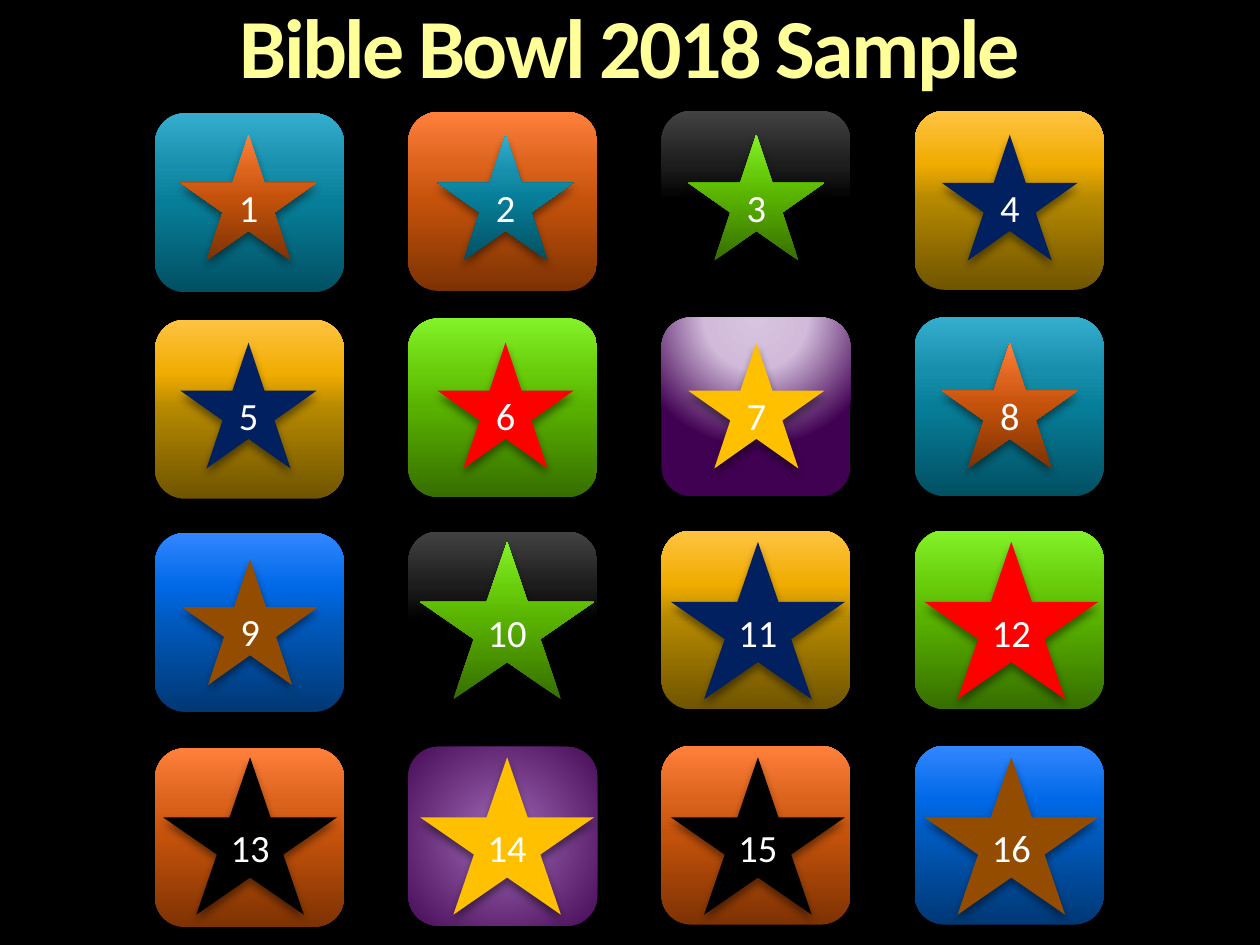
from lxml import etree
from pptx import Presentation
from pptx.dml.color import RGBColor
from pptx.enum import shapes, text
from pptx.oxml import ns
from pptx.util import Pt

SOLID = {"navy": "002060", "red": "FF0000", "gold": "FFC000", "black": "000000",
         "brown": "944D00", "white": "FFFFFF"}
# Gradient stops: (position in percent, colour)
POSITIONS = (0, 50, 70, 100)
GRADIENT = {name: list(zip(POSITIONS, colors.split())) for name, colors in {
    "teal": "015062 077E99 178EAB 35ADCE",
    "orange": "7D3203 C4520B DB631C FF803C",
    "charcoal": "000000 000000 1D1D1D 424242",
    "amber": "705400 B48800 F0AC00 FFC342",
    "green": "376E00 58B100 68CC0B 83F229",
    "blue": "003875 005ABD 0069E7 3286FF",
}.items()}
GRADIENT["lilac"] = [(0, "D7C4DF"), (40, "D1BADA"), (100, "410152")]
GRADIENT["purple"] = [(0, "A26BB7"), (100, "470C58")]
GRADIENT["title"] = [(0, "FFFFB9"), (36, "FFFF99"), (86, "F6AE1E")]
# Focus of the circular gradients: left, top, right, bottom in percent
FOCUS = {"lilac": (50, -80, 50, 180), "purple": (50, 50, 50, 50)}


def gradient(name, angle=270):
    grad = etree.Element(ns.qn("a:gradFill"), rotWithShape="1")
    stops = etree.SubElement(grad, ns.qn("a:gsLst"))
    for pos, color in GRADIENT[name]:
        gs = etree.SubElement(stops, ns.qn("a:gs"), pos=str(pos * 1000))
        etree.SubElement(gs, ns.qn("a:srgbClr"), val=color)
    if name in FOCUS:
        circle = etree.SubElement(grad, ns.qn("a:path"), path="circle")
        sides = {k: str(v * 1000) for k, v in zip("ltrb", FOCUS[name])}
        etree.SubElement(circle, ns.qn("a:fillToRect"), **sides)
    else:
        etree.SubElement(grad, ns.qn("a:lin"), ang=str(angle * 60000), scaled="0")
    return grad


def add_tile(kind, left, top, width, height, color):
    sp = s.shapes.add_shape(kind, Pt(left), Pt(top), Pt(width), Pt(height))
    if color in SOLID:
        sp.fill.solid()
        sp.fill.fore_color.rgb = RGBColor.from_string(SOLID[color])
    else:
        sp._element.spPr.find(ns.qn("a:prstGeom")).addnext(gradient(color))
    sp.line.fill.background()
    # Soft shadow straight below
    sp.shadow.inherit = False
    effects = sp._element.spPr.find(ns.qn("a:effectLst"))
    shadow = etree.SubElement(effects, ns.qn("a:outerShdw"), blurRad=str(Pt(5)),
                              dist=str(Pt(3)), dir="5400000", rotWithShape="0")
    black = etree.SubElement(shadow, ns.qn("a:srgbClr"), val=SOLID["black"])
    etree.SubElement(black, ns.qn("a:alpha"), val="45000")
    return sp


prs = Presentation()
prs.slide_width, prs.slide_height = Pt(720), Pt(540)
s = prs.slides.add_slide(prs.slide_layouts[5])
s.background.fill.solid()
s.background.fill.fore_color.rgb = RGBColor.from_string(SOLID["black"])

# Title
title = s.shapes.title
title.left, title.top, title.width, title.height = Pt(30), Pt(3.6), Pt(660), Pt(52.6)
tf = title.text_frame
tf.margin_left = tf.margin_top = tf.margin_right = tf.margin_bottom = 0
tf.vertical_anchor = text.MSO_ANCHOR.TOP
tf.auto_size = text.MSO_AUTO_SIZE.SHAPE_TO_FIT_TEXT
p = tf.paragraphs[0]
p.alignment = text.PP_ALIGN.CENTER
p.line_spacing = 0.9
p.font.name, p.font.size, p.font.bold = "Calibri", Pt(48), True
r = p.add_run()
r.text = "Bible Bowl 2018 Sample"
rPr = r._r.get_or_add_rPr()
rPr.set("spc", "-150")
rPr.insert(0, gradient("title", 90))

# Square and star colours, row by row
TILES = [
    [("teal", "orange"), ("orange", "teal"), ("charcoal", "green"), ("amber", "navy")],
    [("amber", "navy"), ("green", "red"), ("lilac", "gold"), ("teal", "orange")],
    [("blue", "brown"), ("charcoal", "green"), ("amber", "navy"), ("green", "red")],
    [("orange", "black"), ("purple", "gold"), ("orange", "black"), ("blue", "brown")],
]
SQUARE_TOPS = (63.4, 181.4, 303.2, 426.2)
COLUMN_DROPS = (1.4, 0.6, 0, 0)
STAR_XS = (142, 288.9, 432.2, 577)
STAR_YS = (113, 231.8, 354.6, 477.7)
SMALL, BIG = (77.8, 72), (99.4, 90)

# Squares
for row, tiles in enumerate(TILES):
    for col, (square, star) in enumerate(tiles):
        add_tile(shapes.MSO_SHAPE.ROUNDED_RECTANGLE, 88.6 + 144.7 * col,
                 SQUARE_TOPS[row] + COLUMN_DROPS[col], 108, 102.2, square)

# Numbered stars
for row, tiles in enumerate(TILES):
    for col, (square, star) in enumerate(tiles):
        number = 4 * row + col + 1
        width, height = SMALL if number < 10 else BIG
        shift = 0.9 if row > 1 else 0
        sp = add_tile(shapes.MSO_SHAPE.STAR_5_POINT, STAR_XS[col] + shift - width / 2,
                      STAR_YS[row] + (shift if number == 9 else 0) - height / 2,
                      width, height, star)
        tf = sp.text_frame
        tf.vertical_anchor = text.MSO_ANCHOR.MIDDLE
        p = tf.paragraphs[0]
        p.text = str(number)
        p.alignment = text.PP_ALIGN.CENTER
        p.font.name, p.font.size = "Calibri", Pt(22)
        p.font.color.rgb = RGBColor.from_string(SOLID["white"])

prs.save("out.pptx")
